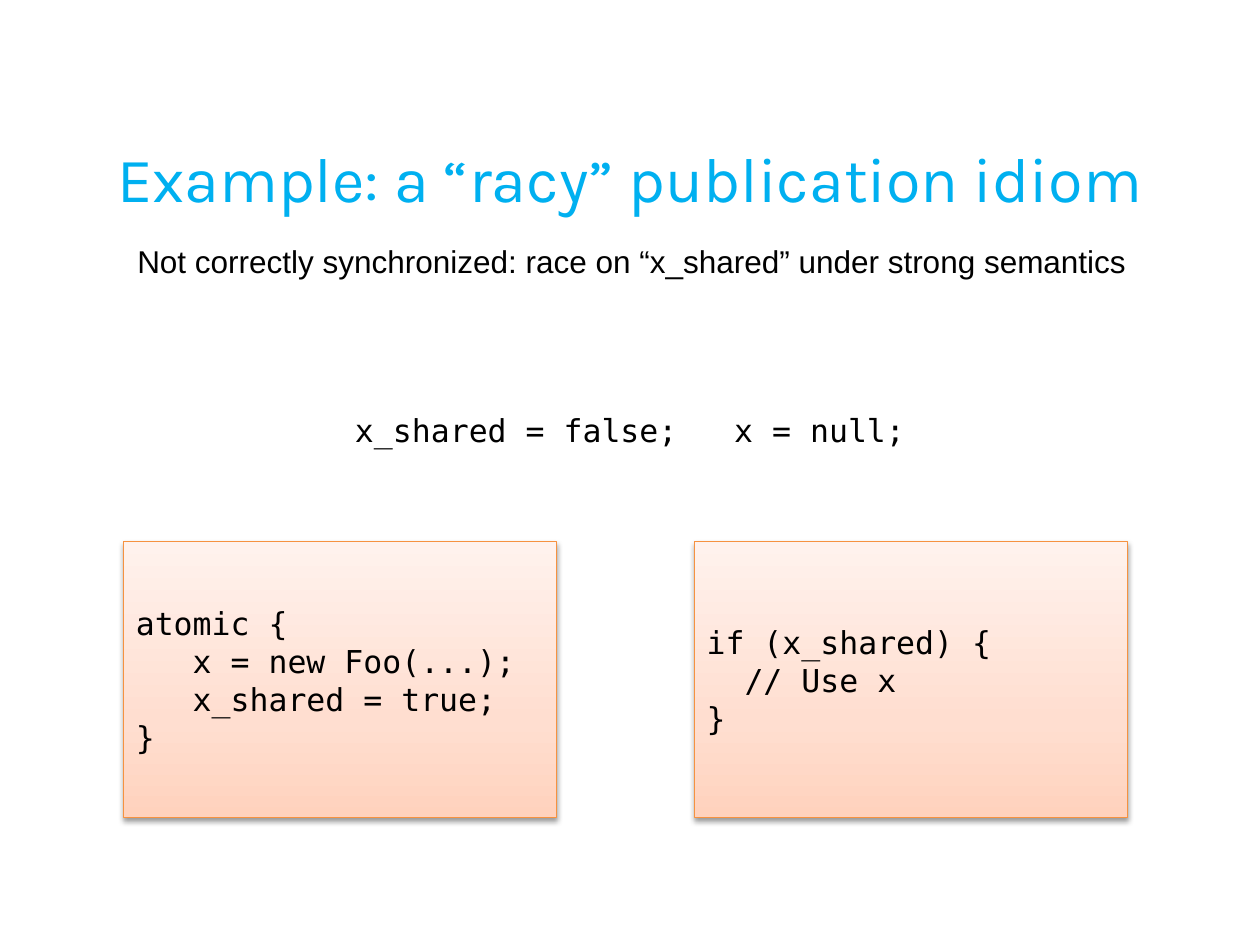
from copy import deepcopy

from lxml import etree
from pptx import Presentation
from pptx.dml.color import RGBColor
from pptx.enum.shapes import MSO_SHAPE
from pptx.enum.text import MSO_ANCHOR, PP_ALIGN
from pptx.oxml.ns import qn
from pptx.util import Pt

EMU_PER_PX = 9144
RECTANGLE = MSO_SHAPE.RECTANGLE
TOP, MIDDLE = MSO_ANCHOR.TOP, MSO_ANCHOR.MIDDLE
LEFT, CENTER = PP_ALIGN.LEFT, PP_ALIGN.CENTER
CODE_FONT = "DejaVu Sans Mono"
GRADIENT = [(0, "FFD2BD"), (0.35, "FFDED0"), (1, "FFF2ED")]


def color(value):
    return RGBColor.from_string(value)


def write(shape, lines, font, size, ink, align, anchor, wrap=True):
    frame = shape.text_frame
    frame.word_wrap = wrap
    frame.vertical_anchor = anchor
    for index, line in enumerate(lines):
        paragraph = frame.add_paragraph() if index else frame.paragraphs[0]
        paragraph.alignment = align
        run = paragraph.add_run()
        run.text = line
        run.font.name = font
        run.font.size = Pt(size)
        run.font.color.rgb = color(ink)


presentation = Presentation()
presentation.slide_width = 1000 * EMU_PER_PX
presentation.slide_height = 750 * EMU_PER_PX
slide = presentation.slides.add_slide(presentation.slide_layouts[6])

texts = [
    ((50, 78, 900, 125), "Example: a “racy” publication idiom",
     "Karla", 36, "00B0F0", MIDDLE, True),
    ((0, 302, 1000, 78), "x_shared = false;   x = null;",
     CODE_FONT, 18, "000000", MIDDLE, True),
    ((95, 187, 813, 40),
     "Not correctly synchronized: race on “x_shared” under strong semantics",
     "Arial", 18, "000000", TOP, False),
]
for bounds, text, font, size, ink, anchor, wrap in texts:
    box = slide.shapes.add_textbox(*[length * EMU_PER_PX for length in bounds])
    write(box, [text], font, size, ink, CENTER, anchor, wrap)

threads = [
    (98, ["atomic {", "   x = new Foo(...);", "   x_shared = true;", "}"]),
    (551, ["if (x_shared) {", "  // Use x", "}"]),
]
for left, code in threads:
    bounds = (left, 430, 344, 219)
    panel = slide.shapes.add_shape(
        RECTANGLE, *[length * EMU_PER_PX for length in bounds])
    panel.fill.gradient()
    panel.fill.gradient_angle = 90
    properties = panel._element.spPr
    stop_list = properties.find(".//" + qn("a:gsLst"))
    stop_list.append(deepcopy(stop_list[0]))
    for stop, (position, shade) in zip(panel.fill.gradient_stops, GRADIENT):
        stop.position = position
        stop.color.rgb = color(shade)
    panel.line.color.rgb = color("F69240")
    panel.line.width = Pt(0.75)

    panel.shadow.inherit = False
    effects = properties.find(qn("a:effectLst"))
    shadow = etree.SubElement(
        effects, qn("a:outerShdw"), blurRad=str(Pt(3.1)), dist=str(Pt(1.6)),
        dir="5400000", rotWithShape="0")
    shadow_color = etree.SubElement(shadow, qn("a:srgbClr"), val="000000")
    etree.SubElement(shadow_color, qn("a:alpha"), val="38000")
    write(panel, code, CODE_FONT, 18, "000000", LEFT, MIDDLE)

presentation.save("out.pptx")
